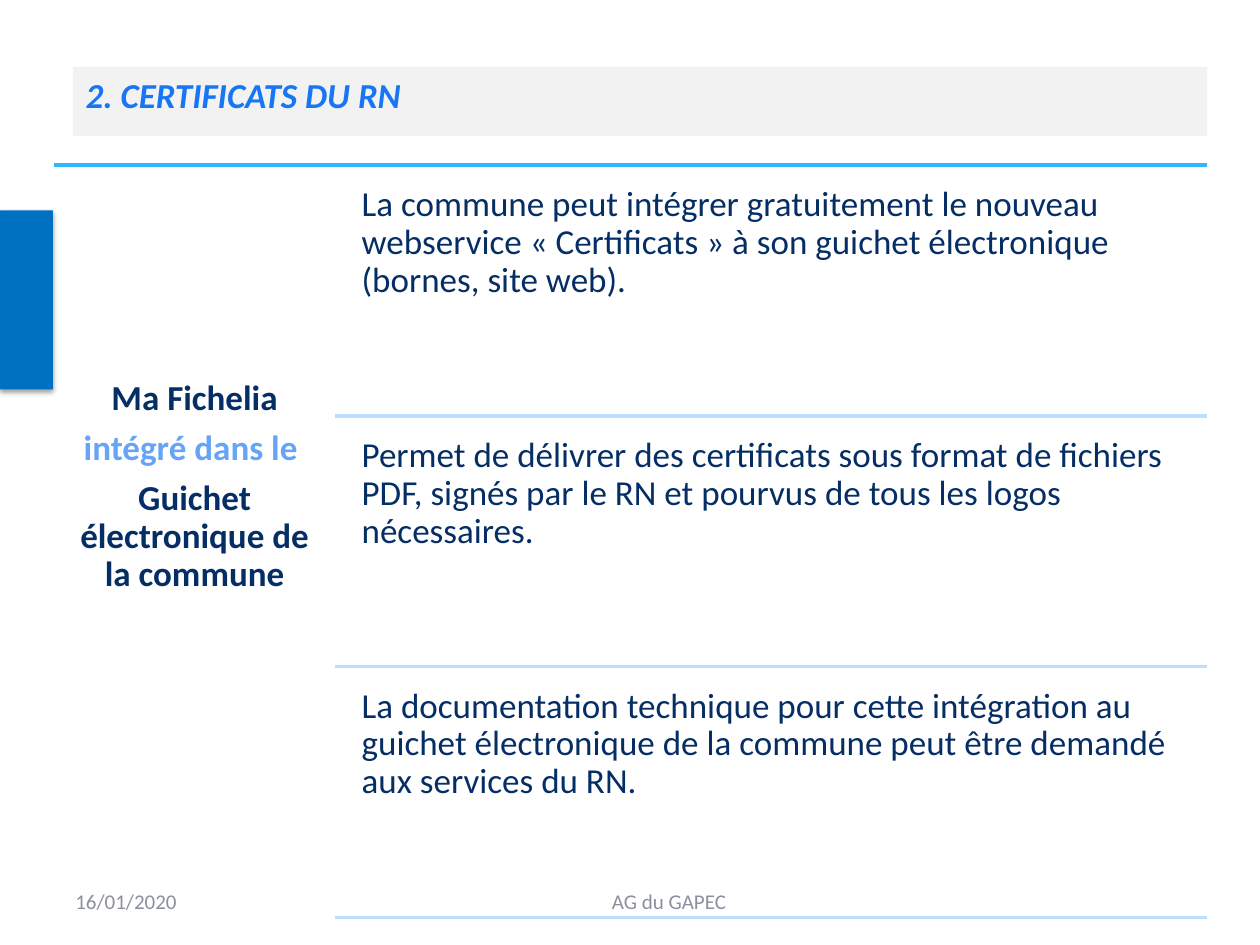
import pptx
import pptx.util
import pptx.dml.color
import pptx.enum.shapes
import pptx.enum.text
import pptx.oxml
import pptx.oxml.ns

In, Pt = pptx.util.Inches, pptx.util.Pt
ALIGN = pptx.enum.text.PP_ALIGN
ANCHOR = pptx.enum.text.MSO_ANCHOR

# Content
TITLE = "2. CERTIFICATS DU RN"
LABEL = [("Ma Fichelia", "navy"), ("intégré dans le ", "sky"),
         ("Guichet électronique de la commune", "navy")]
POINTS = [
    "La commune peut intégrer gratuitement le nouveau webservice "
    "« Certificats » à son guichet électronique (bornes, site web).",
    "Permet de délivrer des certificats sous format de fichiers PDF, "
    "signés par le RN et pourvus de tous les logos nécessaires.",
    "La documentation technique pour cette intégration au guichet "
    "électronique de la commune peut être demandé aux services du RN.",
]
FOOTERS = [("16/01/2020", 0.5, 2.33, ALIGN.LEFT),
           ("AG du GAPEC", 2.95, 4.72, ALIGN.CENTER)]

COLORS = {"tab": "0070C0", "rule": "31B6FD", "divider": "BEDEFE", "band": "F2F2F2",
          "title": "1876F4", "navy": "052E65", "sky": "65A4F7", "footer": "8C8F9F"}

# Layout
W, H = 10, 7.5
LEFT, SPLIT, RIGHT = 0.43, 2.66, 9.58
TOP, ROW = 1.31, 1.99
PAD = 0.08
GAP_X, GAP_Y = 0.13, 0.09
BODY = {"line_spacing": 0.9, "space_after": Pt(7)}


def rgb(name):
    return pptx.dml.color.RGBColor.from_string(COLORS[name])


def write(sp, lines, size, para=None, font=None, frame=None):
    """Fill a shape with (text, colour) paragraphs."""
    tf = sp.text_frame
    tf.word_wrap = True
    tf.auto_size = pptx.enum.text.MSO_AUTO_SIZE.NONE
    for key, value in (frame or {}).items():
        setattr(tf, key, value)
    for i, (text, color) in enumerate(lines):
        p = tf.add_paragraph() if i else tf.paragraphs[0]
        for key, value in (para or {}).items():
            setattr(p, key, value)
        r = p.add_run()
        r.text = text
        for key, value in {"name": "Calibri", "size": Pt(size), **(font or {})}.items():
            setattr(r.font, key, value)
        r.font.color.rgb = rgb(color)


def text_box(slide, x, y, w, h, *args, **kwargs):
    sp = slide.shapes.add_textbox(In(x), In(y), In(w), In(h))
    write(sp, *args, **kwargs)


def insets(top=PAD):
    return {"margin_left": In(PAD), "margin_right": In(PAD),
            "margin_top": In(top), "margin_bottom": In(PAD)}


def rule(slide, x, y, color):
    line = slide.shapes.add_connector(
        pptx.enum.shapes.MSO_CONNECTOR.STRAIGHT, In(x), In(y), In(RIGHT), In(y))
    line.line.color.rgb = rgb(color)
    line.line.width = Pt(2)
    line._element.spPr.append(pptx.oxml.parse_xml(
        f'<a:effectLst {pptx.oxml.ns.nsdecls("a")}/>'))


def main():
    prs = pptx.Presentation()
    prs.slide_width, prs.slide_height = In(W), In(H)
    slide = prs.slides.add_slide(prs.slide_layouts[5])

    # Side tab with a soft shadow
    tab = slide.shapes.add_shape(pptx.enum.shapes.MSO_SHAPE.RECTANGLE,
                                 0, In(1.67), In(0.42), In(1.42))
    tab.fill.solid()
    tab.fill.fore_color.rgb = rgb("tab")
    tab.line.fill.background()
    tab._element.spPr.append(pptx.oxml.parse_xml(
        f'<a:effectLst {pptx.oxml.ns.nsdecls("a")}>'
        f'<a:outerShdw blurRad="{Pt(3.1)}" dist="{Pt(1.6)}" dir="5400000" rotWithShape="0">'
        '<a:srgbClr val="000000"><a:alpha val="38000"/></a:srgbClr>'
        '</a:outerShdw></a:effectLst>'))

    # Label column, starting below four body lines
    rule(slide, LEFT, TOP, "rule")
    text_box(slide, LEFT, TOP, SPLIT - LEFT, 6.06, LABEL, 20,
             para={**BODY, "alignment": ALIGN.CENTER}, font={"bold": True},
             frame=insets(top=1.71))

    # One row per point, closed by a divider
    for i, point in enumerate(POINTS):
        y = TOP + i * ROW
        text_box(slide, SPLIT + GAP_X, y + GAP_Y, RIGHT - SPLIT - GAP_X, ROW - GAP_Y,
                 [(point, "navy")], 20, para=BODY, frame=insets())
        rule(slide, SPLIT, y + ROW, "divider")

    # Footer
    for text, x, w, align in FOOTERS:
        text_box(slide, x, 6.95, w, 0.4, [(text, "footer")], 12,
                 para={"alignment": align}, frame={"vertical_anchor": ANCHOR.MIDDLE})

    # Title band
    title = slide.shapes.title
    title.left, title.top, title.width, title.height = In(0.58), In(0.53), In(9), In(0.55)
    title.fill.solid()
    title.fill.fore_color.rgb = rgb("band")
    write(title, [(TITLE, "title")], 20, para={"alignment": ALIGN.LEFT},
          font={"bold": True, "italic": True}, frame={"vertical_anchor": ANCHOR.TOP})

    prs.save("out.pptx")


if __name__ == "__main__":
    main()
